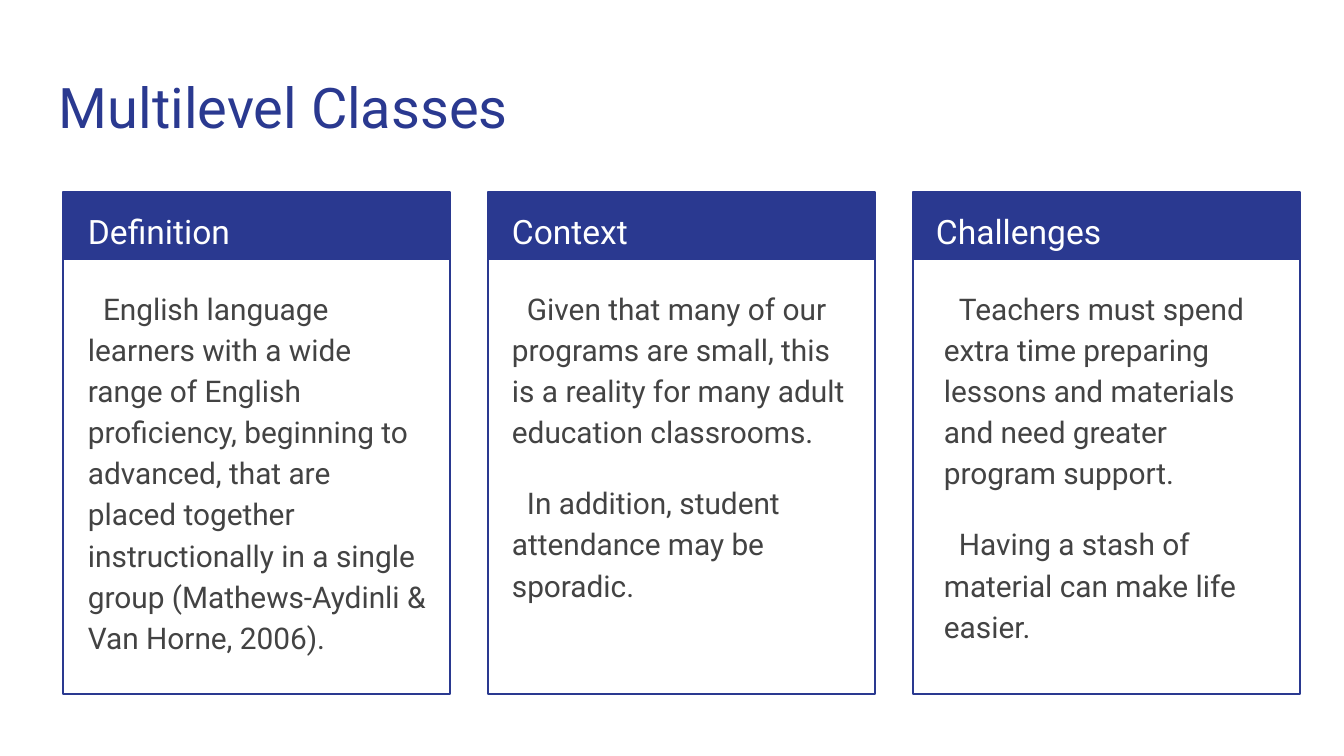
from pptx import Presentation
from pptx.dml.color import RGBColor
from pptx.enum.shapes import MSO_SHAPE
from pptx.enum.text import MSO_ANCHOR, MSO_AUTO_SIZE, PP_ALIGN
from pptx.util import Pt

BLUE = RGBColor(0x2A, 0x39, 0x90)
GREY = RGBColor(0x43, 0x43, 0x43)
WHITE = RGBColor(0xFF, 0xFF, 0xFF)
FONT = "Roboto"

TITLE = "Multilevel Classes"
CARDS = [
    {"head": "Definition", "margin": 0, "body": [
        "English language learners with a wide range of English proficiency, "
        "beginning to advanced, that are placed together instructionally in a "
        "single group (Mathews-Aydinli & Van Horne, 2006)."]},
    {"head": "Context", "margin": 0, "body": [
        "Given that many of our programs are small, this is a reality for many "
        "adult education classrooms.",
        "In addition, student attendance may be sporadic."]},
    {"head": "Challenges", "margin": 8, "body": [
        "Teachers must spend extra time preparing lessons and materials and need "
        "greater program support.",
        "Having a stash of material can make life easier."]},
]

PX = 6804
INSET = 13
CARD_LEFT, CARD_TOP, CARD_W, CARD_H, CARD_PITCH = 63, 192, 387, 502, 425
HEAD_H = 68
TEXT_LEFT, TEXT_PITCH = 75, 424
BODY_TOP, BODY_W, BODY_H = 272, 364, 411


def px(*values):
    return [v * PX for v in values]


def write(sp, texts, size, color, spacing=1.0, gap=0, margin=0, indent=0):
    tf = sp.text_frame
    tf.word_wrap = True
    tf.auto_size = MSO_AUTO_SIZE.NONE
    tf.vertical_anchor = MSO_ANCHOR.TOP
    tf.margin_left = tf.margin_right = tf.margin_top = tf.margin_bottom = INSET * PX
    for i, text in enumerate(texts):
        p = tf.add_paragraph() if i else tf.paragraphs[0]
        p.alignment = PP_ALIGN.LEFT
        p.line_spacing = spacing
        p.space_before = Pt(gap if i else 0)
        p.space_after = Pt(0)
        pPr = p._p.get_or_add_pPr()
        pPr.set("marL", str(margin * PX))
        pPr.set("indent", str(indent * PX))
        r = p.add_run()
        r.text = text
        r.font.name = FONT
        r.font.size = Pt(size)
        r.font.color.rgb = color


def add_rect(s, left, height, fill=None, line=None):
    sp = s.shapes.add_shape(MSO_SHAPE.RECTANGLE, *px(left, CARD_TOP, CARD_W, height))
    sp.shadow.inherit = False
    for part, color in ((sp.fill, fill), (sp.line.fill, line)):
        if color is None:
            part.background()
        else:
            part.solid()
            part.fore_color.rgb = color
    if line is not None:
        sp.line.width = Pt(0.75)


prs = Presentation()
prs.slide_width, prs.slide_height = px(1344, 756)
s = prs.slides.add_slide(prs.slide_layouts[5])

title = s.shapes.title
title.left, title.top, title.width, title.height = px(46, 60, 1252, 89)
write(title, [TITLE], 30, BLUE)

for i, card in enumerate(CARDS):
    left = CARD_LEFT + i * CARD_PITCH
    text_left = TEXT_LEFT + i * TEXT_PITCH
    add_rect(s, left, HEAD_H, fill=BLUE)
    add_rect(s, left, CARD_H, line=BLUE)
    head = s.shapes.add_textbox(*px(text_left, CARD_TOP, BODY_W, HEAD_H))
    write(head, [card["head"]], 18, WHITE, spacing=1.15)
    body = s.shapes.add_textbox(*px(text_left, BODY_TOP, BODY_W, BODY_H))
    write(body, card["body"], 16, GREY, spacing=1.15, gap=16,
          margin=card["margin"], indent=15)

prs.save("out.pptx")
